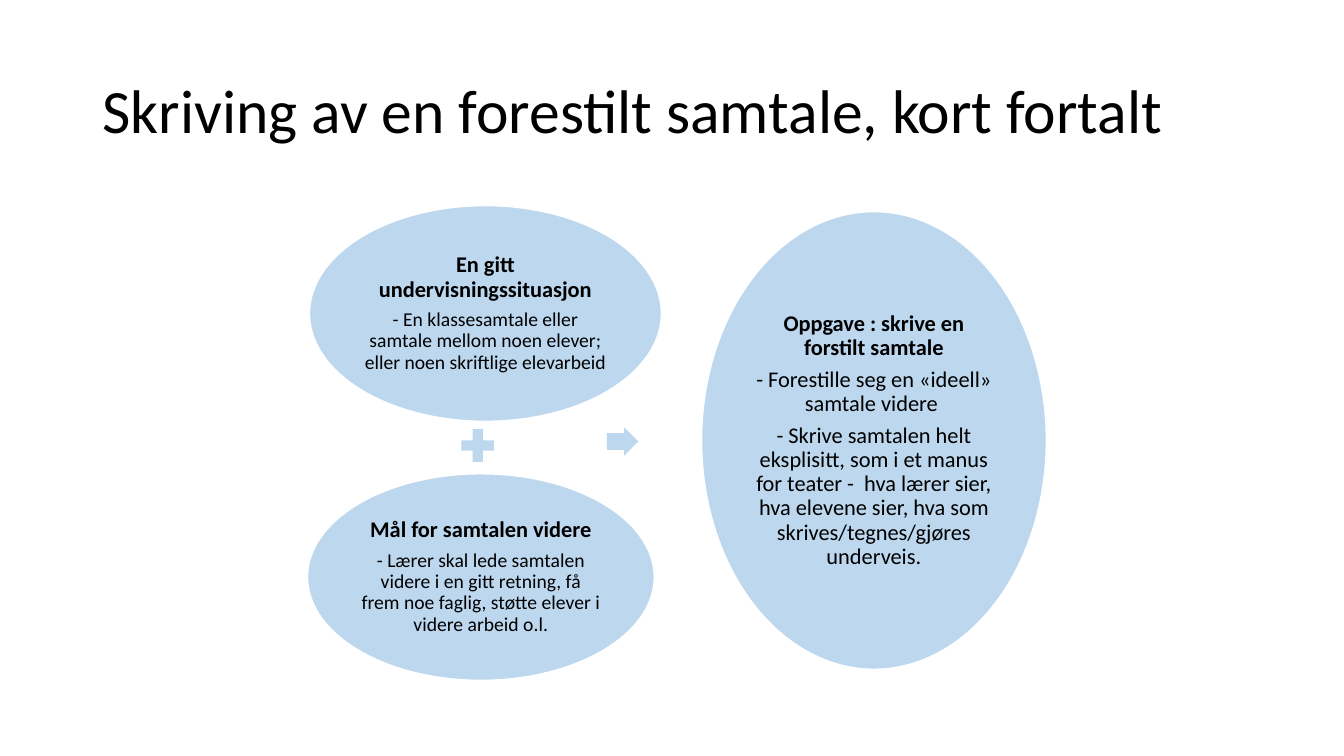
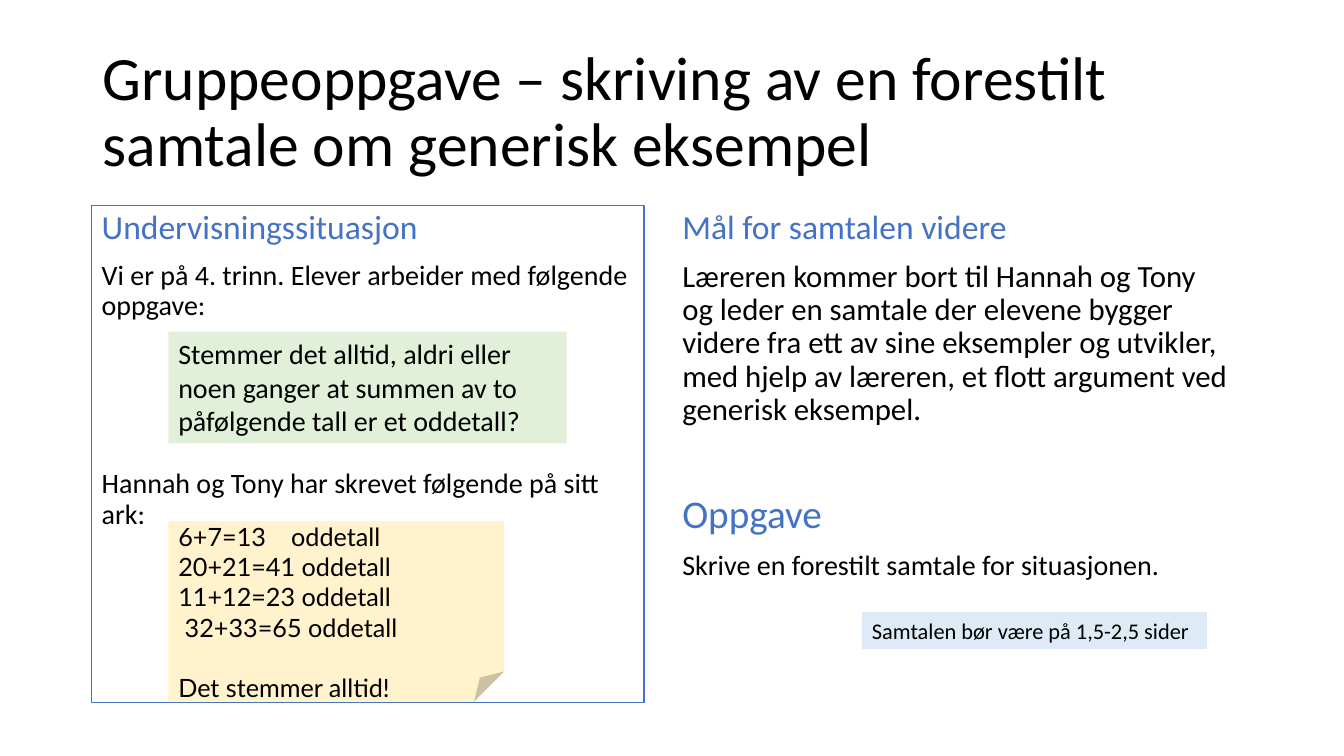
"""Build two slides on writing an imagined classroom conversation."""
import pptx
import pptx.util
import pptx.dml.color
import pptx.enum.shapes
import pptx.enum.text
import pptx.oxml.ns
import lxml.etree

SHAPE = pptx.enum.shapes.MSO_SHAPE
ALIGN = pptx.enum.text.PP_ALIGN
ANCHOR = pptx.enum.text.MSO_ANCHOR
Pt, Inches = pptx.util.Pt, pptx.util.Inches

WIDTH, HEIGHT = Inches(13.33), Inches(7.5)
BLACK, WHITE, ACCENT = "000000", "FFFFFF", "4472C4"
BUBBLE, GREEN, YELLOW, PALE_BLUE = "BDD7EE", "E2F0D9", "FFF2CC", "DEEBF7"

TITLE_AREA = (6.9, 5.33, 86.25, 19.33)
TITLE = {"line_spacing": 0.9}
BODY = {"line_spacing": 0.9, "space_before": Pt(10)}
CENTRED = {"line_spacing": 0.9, "space_after": Pt(5.6), "alignment": ALIGN.CENTER}
BUBBLE_FRAME = {"vertical_anchor": ANCHOR.MIDDLE} | {
    f"margin_{side}": Inches(0.02) for side in ("left", "top", "right", "bottom")}
NOTE_FRAME = {"vertical_anchor": ANCHOR.TOP, "margin_top": 0, "margin_bottom": 0}
NOTE_TAB = Inches(1.12)

BUBBLES = [
    ((23.03, 27.2, 26.18, 28.53), "En gitt undervisningssituasjon", 14,
     ["- En klassesamtale eller samtale mellom noen elever; eller noen skriftlige elevarbeid "]),
    ((22.88, 62.67, 25.8, 27.33), "Mål for samtalen videre", 14,
     ["- Lærer skal lede samtalen videre i en gitt retning, få frem noe faglig, "
      "støtte elever i videre arbeid o.l."]),
    ((52.2, 28, 25.65, 60.53), "Oppgave : skrive en forstilt samtale", 16,
     ["- Forestille seg en «ideell» samtale videre ",
      "- Skrive samtalen helt eksplisitt, som i et manus for teater -  hva lærer sier, "
      "hva elevene sier, hva som skrives/tegnes/gjøres underveis."]),
]
SITUATION = [
    ("Undervisningssituasjon", 24, ACCENT, BODY),
    ("Vi er på 4. trinn. Elever arbeider med følgende oppgave:", 20, BLACK, BODY),
    ("Hannah og Tony har skrevet følgende på sitt ark:", 20, BLACK,
     BODY | {"space_before": Pt(106)}),
]
GOAL = [
    ("Mål for samtalen videre", 24, ACCENT, BODY),
    ("Læreren kommer bort til Hannah og Tony og leder en samtale der elevene bygger videre "
     "fra ett av sine eksempler og utvikler, med hjelp av læreren, et flott argument ved "
     "generisk eksempel.", 22, BLACK, BODY),
    ("Oppgave", 28, ACCENT, BODY | {"space_before": Pt(48.5)}),
    ("Skrive en forestilt samtale for situasjonen.", 20, BLACK, BODY),
]
QUESTION = ("Stemmer det alltid, aldri eller noen ganger at summen av to "
            "påfølgende tall er et oddetall?")
SUMS = ["6+7=13\toddetall", "20+21=41 oddetall", "11+12=23 oddetall", " 32+33=65 oddetall"]
CONCLUSION = "Det stemmer alltid!"
LENGTH_HINT = "Samtalen bør være på 1,5-2,5 sider"


def colour(value):
    return pptx.dml.color.RGBColor.from_string(value)


def apply(target, values):
    for name, value in values.items():
        setattr(target, name, value)


def place(area):
    left, top, width, height = (share / 100 for share in area)
    return [round(length) for length in
            (left * WIDTH, top * HEIGHT, width * WIDTH, height * HEIGHT)]


def write(shape, paragraphs, frame_format=None, font="Calibri"):
    frame = shape.text_frame
    apply(frame, {"word_wrap": True, "vertical_anchor": ANCHOR.TOP} | (frame_format or {}))
    for index, (text, size, text_colour, layout, *bold) in enumerate(paragraphs):
        paragraph = frame.add_paragraph() if index else frame.paragraphs[0]
        apply(paragraph, {"alignment": ALIGN.LEFT} | layout)
        run = paragraph.add_run()
        run.text = text
        apply(run.font, {"name": font, "size": Pt(size), "bold": bool(bold)})
        run.font.color.rgb = colour(text_colour)


def add_shape(slide, kind, area, fill, line=None):
    shape = slide.shapes.add_shape(kind, *place(area))
    shape.shadow.inherit = False
    shape.fill.solid()
    shape.fill.fore_color.rgb = colour(fill)
    if line:
        shape.line.color.rgb = colour(line)
        shape.line.width = Pt(1)
    else:
        shape.line.fill.background()
    return shape


def add_titled_slide(presentation, title):
    slide = presentation.slides.add_slide(presentation.slide_layouts[6])
    box = slide.shapes.add_textbox(*place(TITLE_AREA))
    write(box, [(title, 44, BLACK, TITLE)], {"vertical_anchor": ANCHOR.MIDDLE})
    return slide


def add_tab_stop(paragraph, position):
    qn = pptx.oxml.ns.qn
    tabs = lxml.etree.SubElement(paragraph._p.get_or_add_pPr(), qn("a:tabLst"))
    lxml.etree.SubElement(tabs, qn("a:tab"), pos=str(position), algn="l")


def build_overview(presentation):
    slide = add_titled_slide(presentation, "Skriving av en forestilt samtale, kort fortalt")
    for area, heading, size, points in BUBBLES:
        bubble = add_shape(slide, SHAPE.OVAL, area, BUBBLE, WHITE)
        paragraphs = [(heading, 16, BLACK, CENTRED, True)]
        paragraphs += [(point, size, BLACK, CENTRED) for point in points]
        write(bubble, paragraphs, BUBBLE_FRAME)
    add_shape(slide, SHAPE.MATH_PLUS, (33.9, 56, 3.3, 5.87), BUBBLE)
    arrow = add_shape(slide, SHAPE.RIGHT_ARROW, (45.16, 56.53, 2.33, 3.73), BUBBLE)
    arrow.rotation = 359.7
    arrow.adjustments[0] = 0.6


def build_task(presentation):
    slide = add_titled_slide(
        presentation, "Gruppeoppgave – skriving av en forestilt samtale om generisk eksempel")
    situation = add_shape(slide, SHAPE.RECTANGLE, (6.83, 27.2, 41.1, 65.73), WHITE, ACCENT)
    write(situation, SITUATION)
    question = add_shape(slide, SHAPE.RECTANGLE, (12.53, 43.87, 29.63, 14.8), GREEN)
    write(question, [(QUESTION, 20, BLACK, {})])
    note = add_shape(slide, SHAPE.FOLDED_CORNER, (12.53, 68.93, 24.98, 23.87), YELLOW)
    lines = [(line, 18, BLACK, {}) for line in SUMS]
    lines.append((CONCLUSION, 18, BLACK, {"space_before": Pt(21.6)}))
    write(note, lines, NOTE_FRAME, "Lato")
    add_tab_stop(note.text_frame.paragraphs[0], NOTE_TAB)
    goal = slide.shapes.add_textbox(*place((50.03, 27.2, 42.38, 65.73)))
    write(goal, GOAL)
    hint = add_shape(slide, SHAPE.RECTANGLE, (64.14, 80.93, 25.65, 4.93), PALE_BLUE)
    write(hint, [(LENGTH_HINT, 16, BLACK, {})])


def main():
    presentation = pptx.Presentation()
    apply(presentation, {"slide_width": WIDTH, "slide_height": HEIGHT})
    build_overview(presentation)
    build_task(presentation)
    presentation.save("out.pptx")


if __name__ == "__main__":
    main()
